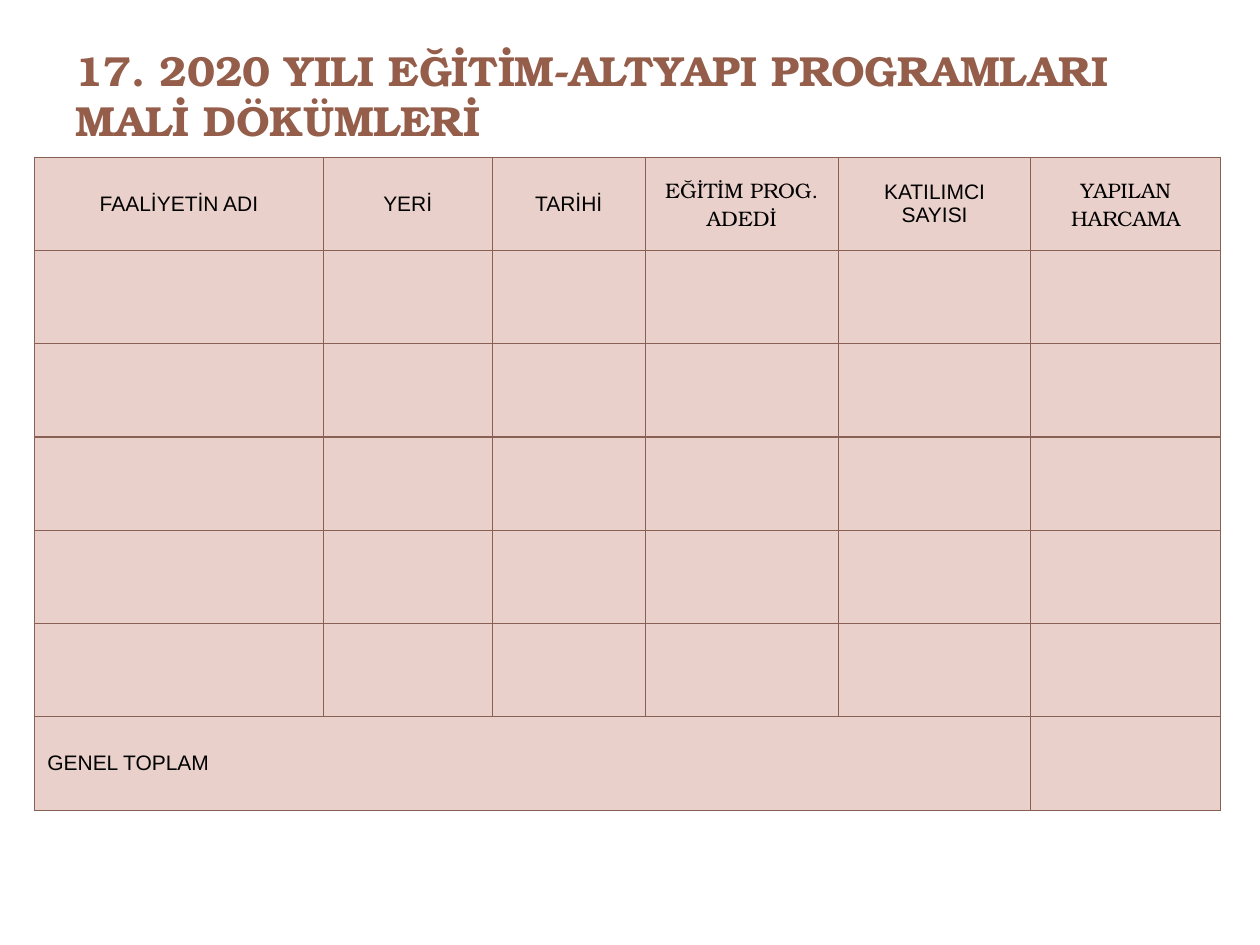
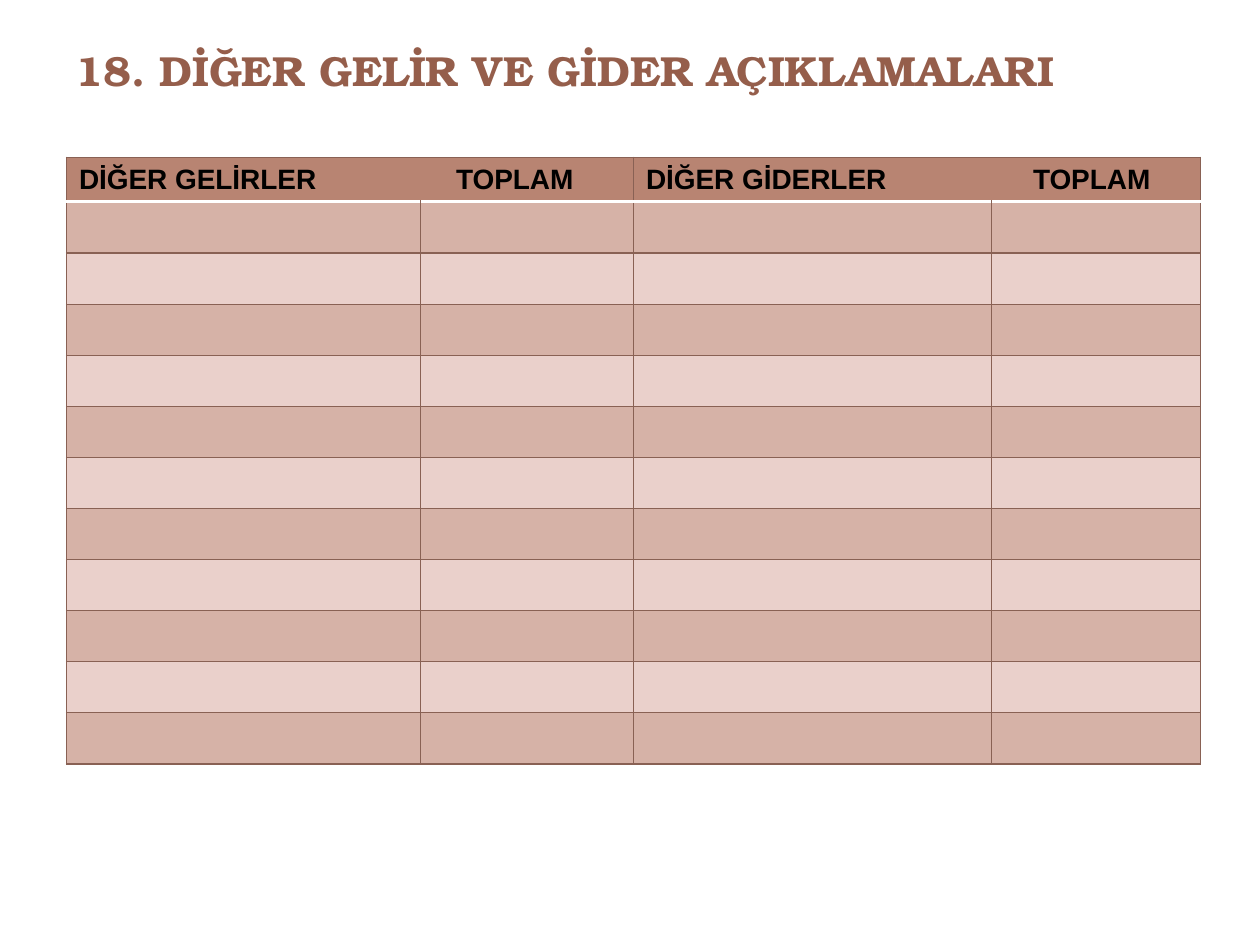
from dataclasses import dataclass

from lxml.etree import SubElement
from pptx import Presentation
from pptx.dml.color import RGBColor
from pptx.enum.text import MSO_ANCHOR as Anchor, MSO_AUTO_SIZE as AutoSize, PP_ALIGN as Align
from pptx.oxml.ns import qn
from pptx.util import Cm, Pt


@dataclass(frozen=True)
class Theme:
    title_color: str = "955E4B"
    text_color: str = "000000"
    grid: str = "896154"
    header_rule: str = "FFFFFF"
    header_fill: str = "B88472"
    dark_band: str = "D6B2A7"
    light_band: str = "EAD0CB"
    serif: str = "TeX Gyre Bonum"
    sans: str = "Arial"
    title_size: int = 24
    header_size: int = 16
    label_size: int = 12
    grid_width: float = 0.75
    rule_width: float = 2


class Deck:
    """Holds the style and the current slide."""

    table_top = Cm(3.17)

    def __init__(self, theme):
        self.theme = theme
        self.prs = Presentation()
        self.prs.slide_width, self.prs.slide_height = Cm(25.4), Cm(19.05)
        self.slide = None

    def style(self, paragraph, font, size, color, bold=False, align=Align.LEFT):
        paragraph.alignment = align
        paragraph.font.name = font
        paragraph.font.size = Pt(size)
        paragraph.font.bold = bold
        paragraph.font.color.rgb = RGBColor.from_string(color)

    def add_slide(self, heading, height):
        self.slide = self.prs.slides.add_slide(self.prs.slide_layouts[5])
        title = self.slide.shapes.title
        title.left, title.top = Cm(1.27), Cm(0.76)
        title.width, title.height = Cm(22.86), Cm(height)
        frame = title.text_frame
        frame.text = heading
        frame.auto_size = AutoSize.NONE
        frame.vertical_anchor = Anchor.TOP
        self.style(frame.paragraphs[0], self.theme.serif, self.theme.title_size,
                   self.theme.title_color, bold=True)

    def add_table(self, left, widths, heights):
        frame = self.slide.shapes.add_table(
            len(heights), len(widths), Cm(left), self.table_top,
            Cm(sum(widths)), Cm(sum(heights)))
        table = frame.table
        table.first_row = table.horz_banding = False
        for column, width in zip(table.columns, widths):
            column.width = Cm(width)
        for row, height in zip(table.rows, heights):
            row.height = Cm(height)
        return table

    def paint(self, cell, fill, white_side=None):
        """Draw the cell's grid lines, one of them white if asked, and fill it."""
        properties = cell._tc.get_or_add_tcPr()
        for side in "LRTB":
            white = side == white_side
            width = self.theme.rule_width if white else self.theme.grid_width
            line = SubElement(properties, qn(f"a:ln{side}"), w=str(Pt(width)))
            solid = SubElement(line, qn("a:solidFill"))
            SubElement(solid, qn("a:srgbClr"),
                       val=self.theme.header_rule if white else self.theme.grid)
        cell.fill.solid()
        cell.fill.fore_color.rgb = RGBColor.from_string(fill)

    def label(self, cell, text, font, size, **look):
        cell.text = text
        cell.vertical_anchor = Anchor.MIDDLE
        paragraph = cell.text_frame.paragraphs[0]
        self.style(paragraph, font, size, self.theme.text_color, **look)
        return paragraph

    def tab_stop(self, paragraph, position):
        tabs = paragraph._p.get_or_add_pPr()
        stops = tabs.makeelement(qn("a:tabLst"))
        SubElement(stops, qn("a:tab"), pos=str(Cm(position)), algn="l")
        tabs.find(qn("a:defRPr")).addprevious(stops)


def programme_costs(deck):
    theme = deck.theme
    deck.add_slide("17. 2020 YILI EĞİTİM-ALTYAPI PROGRAMLARI MALİ DÖKÜMLERİ", 1.96)
    costs = deck.add_table(0.7, [5.82, 3.4, 3.09, 3.89, 3.88, 3.83], [1.88] * 7)
    total = costs.cell(6, 0)
    total.merge(costs.cell(6, 4))
    for cell in costs.iter_cells():
        if not cell.is_spanned:
            deck.paint(cell, theme.light_band)

    # Column headings and the total
    headings = [
        ("FAALİYETİN ADI", theme.sans), ("YERİ", theme.sans), ("TARİHİ", theme.sans),
        ("EĞİTİM PROG. ADEDİ", theme.serif), ("KATILIMCI SAYISI", theme.sans),
        ("YAPILAN HARCAMA", theme.serif),
    ]
    for column, (heading, font) in enumerate(headings):
        deck.label(costs.cell(0, column), heading, font, theme.label_size, align=Align.CENTER)
    deck.label(total, "GENEL TOPLAM", theme.sans, theme.label_size)


def other_income_and_expenses(deck):
    theme = deck.theme
    deck.add_slide("18. DİĞER GELİR VE GİDER AÇIKLAMALARI", 3.17)
    balance = deck.add_table(1.34, [7.14, 4.29, 7.21, 4.22], [0.9] + [1.03] * 11)

    # Header: each half names its entries and, at a tab stop, their total
    halves = [("DİĞER GELİRLER\tTOPLAM", 7.6), ("DİĞER GİDERLER\tTOPLAM", 7.8)]
    for half, (heading, total_position) in enumerate(halves):
        header = balance.cell(0, 2 * half)
        header.merge(balance.cell(0, 2 * half + 1))
        deck.paint(header, theme.header_fill, white_side="B")
        paragraph = deck.label(header, heading, theme.sans, theme.header_size, bold=True)
        deck.tab_stop(paragraph, total_position)

    # Banded entry rows
    for row in range(1, len(balance.rows)):
        band = theme.dark_band if row % 2 else theme.light_band
        for column in range(len(balance.columns)):
            deck.paint(balance.cell(row, column), band, white_side="T" if row == 1 else None)


def main():
    deck = Deck(Theme())
    programme_costs(deck)
    other_income_and_expenses(deck)
    deck.prs.save("out.pptx")


if __name__ == "__main__":
    main()
